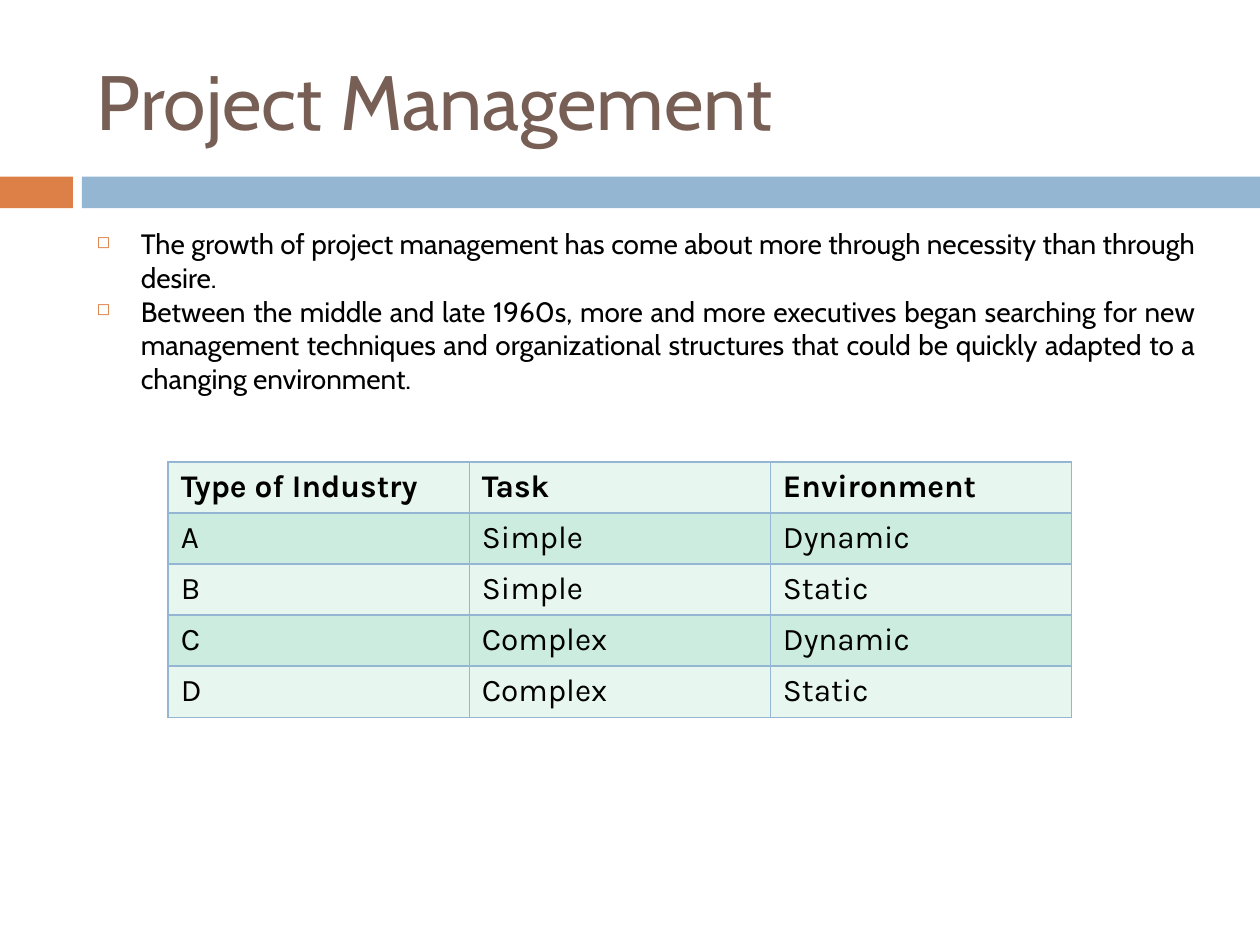
from typing import NamedTuple

from lxml import etree
from pptx import Presentation
from pptx import util as u
from pptx.dml.color import RGBColor
from pptx.enum import shapes, text
from pptx.oxml import ns

ORANGE, BLUE, BROWN, BLACK = "DD8047", "94B6D2", "775F55", "000000"
BAND_FILLS = ("E7F6EF", "CBECDE")


class Box(NamedTuple):
    """Left, top, width and height in centimetres."""
    left: float
    top: float
    width: float
    height: float

    def lengths(self) -> list:
        return [u.Cm(v) for v in self]


class Bar(NamedTuple):
    box: Box
    colour: str


BARS = (
    Bar(Box(0, 3.56, 1.47, 0.64), ORANGE),
    Bar(Box(1.65, 3.56, 23.75, 0.64), BLUE),
)
TITLE_BOX = Box(1.7, 0.64, 22.66, 2.74)
BODY_BOX = Box(1.7, 4.45, 22.66, 12.5)
TABLE_BOX = Box(3.39, 9.31, 18.21, 5.15)

TITLE_FONT = {"name": "Cabin", "size": u.Pt(44)}
BODY_FONT = {"name": "Cabin", "size": u.Pt(16)}
CELL_FONT = {"name": "Karla", "size": u.Pt(18)}

POINTS = (
    "The growth of project management has come about more through necessity "
    "than through desire.",
    "Between the middle and late 1960s, more and more executives began "
    "searching for new management techniques and organizational structures "
    "that could be quickly adapted to a changing environment.",
)
INDUSTRIES = (
    ("Type of Industry", "Task", "Environment"),
    ("A", "Simple", "Dynamic"),
    ("B", "Simple", "Static"),
    ("C", "Complex", "Dynamic"),
    ("D", "Complex", "Static"),
)


def rgb(colour: str) -> RGBColor:
    return RGBColor.from_string(colour)


def add_run(p, words: str, font: dict, colour: str, bold: bool = False) -> None:
    r = p.add_run()
    r.text = words
    for name, value in {**font, "bold": bold}.items():
        setattr(r.font, name, value)
    r.font.color.rgb = rgb(colour)


def add_bar(s, bar: Bar) -> None:
    sp = s.shapes.add_shape(shapes.MSO_SHAPE.RECTANGLE, *bar.box.lengths())
    sp.shadow.inherit = False
    sp.fill.solid()
    sp.fill.fore_color.rgb = rgb(bar.colour)
    sp.line.fill.background()


def add_text_frame(s, box: Box, anchor):
    tf = s.shapes.add_textbox(*box.lengths()).text_frame
    for name, value in {"word_wrap": True, "vertical_anchor": anchor}.items():
        setattr(tf, name, value)
    return tf


def set_bullet(p) -> None:
    """Give the paragraph a hanging indent and a small orange square."""
    pPr = p._p.get_or_add_pPr()
    indent = u.Cm(0.89)
    pPr.set("marL", str(indent))
    pPr.set("indent", str(-indent))
    clr = etree.SubElement(pPr, ns.qn("a:buClr"))
    etree.SubElement(clr, ns.qn("a:srgbClr"), val=ORANGE)
    etree.SubElement(pPr, ns.qn("a:buSzPct"), val="60000")
    etree.SubElement(pPr, ns.qn("a:buChar"), char="◻")


def set_borders(cell, colour: str) -> None:
    tcPr = cell._tc.get_or_add_tcPr()
    for i, side in enumerate("LRTB"):
        ln = etree.Element(ns.qn(f"a:ln{side}"), w=str(u.Pt(1)))
        fill = etree.SubElement(ln, ns.qn("a:solidFill"))
        etree.SubElement(fill, ns.qn("a:srgbClr"), val=colour)
        tcPr.insert(i, ln)


def add_bullets(s, box: Box, points: tuple) -> None:
    tf = add_text_frame(s, box, text.MSO_ANCHOR.TOP)
    for i, point in enumerate(points):
        p = tf.add_paragraph() if i else tf.paragraphs[0]
        p.alignment = text.PP_ALIGN.JUSTIFY
        set_bullet(p)
        add_run(p, point, BODY_FONT, BLACK)


def add_banded_table(s, box: Box, rows: tuple) -> None:
    table = s.shapes.add_table(len(rows), len(rows[0]), *box.lengths()).table
    for i, row in enumerate(rows):
        for j, words in enumerate(row):
            cell = table.cell(i, j)
            cell.fill.solid()
            cell.fill.fore_color.rgb = rgb(BAND_FILLS[i % 2])
            set_borders(cell, BLUE)
            add_run(cell.text_frame.paragraphs[0], words, CELL_FONT, BLACK,
                    bold=i == 0)


def main() -> None:
    prs = Presentation()
    prs.slide_width, prs.slide_height = u.Cm(25.4), u.Cm(19.05)
    s = prs.slides.add_slide(prs.slide_layouts[6])
    for bar in BARS:
        add_bar(s, bar)
    tf = add_text_frame(s, TITLE_BOX, text.MSO_ANCHOR.MIDDLE)
    add_run(tf.paragraphs[0], "Project Management", TITLE_FONT, BROWN)
    add_bullets(s, BODY_BOX, POINTS)
    add_banded_table(s, TABLE_BOX, INDUSTRIES)
    prs.save("out.pptx")


if __name__ == "__main__":
    main()
